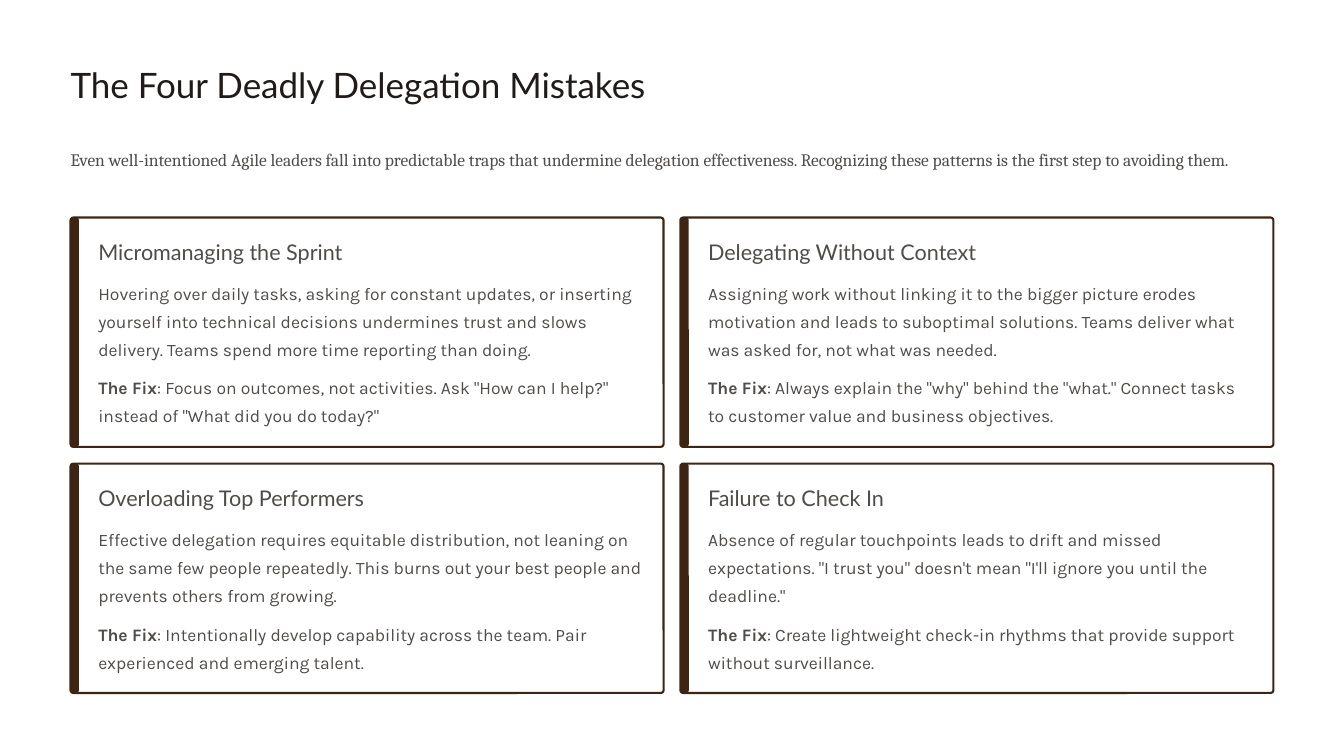
import pptx
import pptx.util
import pptx.dml.color
import pptx.enum.shapes
import pptx.enum.text

TITLE = "The Four Deadly Delegation Mistakes"
INTRO = ("Even well-intentioned Agile leaders fall into predictable traps that undermine "
         "delegation effectiveness. Recognizing these patterns is the first step to avoiding them.")
FIX_LABEL = "The Fix"
MISTAKES = [
    ("Micromanaging the Sprint",
     "Hovering over daily tasks, asking for constant updates, or inserting yourself into technical "
     "decisions undermines trust and slows delivery. Teams spend more time reporting than doing.",
     'Focus on outcomes, not activities. Ask "How can I help?" instead of "What did you do today?"'),
    ("Delegating Without Context",
     "Assigning work without linking it to the bigger picture erodes motivation and leads to "
     "suboptimal solutions. Teams deliver what was asked for, not what was needed.",
     'Always explain the "why" behind the "what." Connect tasks to customer value and business objectives.'),
    ("Overloading Top Performers",
     "Effective delegation requires equitable distribution, not leaning on the same few people "
     "repeatedly. This burns out your best people and prevents others from growing.",
     "Intentionally develop capability across the team. Pair experienced and emerging talent."),
    ("Failure to Check In",
     "Absence of regular touchpoints leads to drift and missed expectations. "
     "\"I trust you\" doesn't mean \"I'll ignore you until the deadline.\"",
     "Create lightweight check-in rhythms that provide support without surveillance."),
]

INK = pptx.dml.color.RGBColor(0x20, 0x1B, 0x18)
GRAY = pptx.dml.color.RGBColor(0x50, 0x4C, 0x49)
BROWN = pptx.dml.color.RGBColor(0x3E, 0x25, 0x13)
WHITE = pptx.dml.color.RGBColor(0xFF, 0xFF, 0xFF)

SLIDE_W, SLIDE_H = 16, 9
MARGIN = 0.84
CONTENT_W = SLIDE_W - 2 * MARGIN
COLUMNS = 2
GAP = 0.2
CARD_W = (CONTENT_W - GAP * (COLUMNS - 1)) / COLUMNS
CARD_H = 2.73
CARDS_TOP = 2.59
STRIPE_W = 0.1
INDENT = 0.33
TEXT_W = 6.49
HEADING_Y, BODY_Y, FIX_Y = 0.24, 0.69, 1.82


def place(shape, box):
    shape.left, shape.top, shape.width, shape.height = map(pptx.util.Inches, box)


def write(shape, text, font, size, leading, color=GRAY, wrap=True, lead=""):
    frame = shape.text_frame
    frame.margin_left = frame.margin_right = frame.margin_top = frame.margin_bottom = 0
    frame.auto_size = pptx.enum.text.MSO_AUTO_SIZE.NONE
    frame.word_wrap = wrap
    frame.vertical_anchor = pptx.enum.text.MSO_ANCHOR.TOP
    line = frame.paragraphs[0]
    line.alignment = pptx.enum.text.PP_ALIGN.LEFT
    line.line_spacing = pptx.util.Pt(leading)
    for words, bold in ((lead, True), (text, False)):
        if words:
            run = line.add_run()
            run.text = words
            run.font.name = font
            run.font.size = pptx.util.Pt(size)
            run.font.bold = bold
            run.font.color.rgb = color


def add_text(slide, box, text, **style):
    write(slide.shapes.add_textbox(*map(pptx.util.Inches, box)), text, **style)


def add_panel(slide, box, rounding, fill, outline=None):
    panel = slide.shapes.add_shape(
        pptx.enum.shapes.MSO_SHAPE.ROUNDED_RECTANGLE, *map(pptx.util.Inches, box))
    panel.adjustments[0] = rounding
    panel.shadow.inherit = False
    panel.fill.solid()
    panel.fill.fore_color.rgb = fill
    if outline is None:
        panel.line.fill.background()
    else:
        panel.line.color.rgb = outline
        panel.line.width = pptx.util.Pt(1.8)


def add_card(slide, left, top, heading, body, fix):
    add_panel(slide, (left, top, CARD_W, CARD_H), 0.012, WHITE, BROWN)
    add_panel(slide, (left, top, STRIPE_W, CARD_H), 0.315, BROWN)
    text_left = left + INDENT
    add_text(slide, (text_left, top + HEADING_Y, TEXT_W, 0.33), heading,
             font="Lato", size=18.5, leading=23.5, wrap=False)
    add_text(slide, (text_left, top + BODY_Y, TEXT_W, 1.01), body,
             font="Karla", size=15, leading=24)
    add_text(slide, (text_left, top + FIX_Y, TEXT_W, 0.67), ": " + fix,
             font="Karla", size=15, leading=24, lead=FIX_LABEL)


def main():
    deck = pptx.Presentation()
    deck.slide_width = pptx.util.Inches(SLIDE_W)
    deck.slide_height = pptx.util.Inches(SLIDE_H)
    slide = deck.slides.add_slide(deck.slide_layouts.get_by_name("Title Only"))
    slide.background.fill.solid()
    slide.background.fill.fore_color.rgb = WHITE

    title = slide.shapes.title
    place(title, (MARGIN, 0.74, 7.69, 0.52))
    write(title, TITLE, font="Lato", size=30, leading=37.5, color=INK, wrap=False)
    add_text(slide, (MARGIN, 1.69, CONTENT_W, 0.67), INTRO,
             font="Cambria", size=15, leading=24)

    for index, mistake in enumerate(MISTAKES):
        row, column = divmod(index, COLUMNS)
        add_card(slide, MARGIN + column * (CARD_W + GAP),
                 CARDS_TOP + row * (CARD_H + GAP), *mistake)

    deck.save("out.pptx")


if __name__ == "__main__":
    main()
